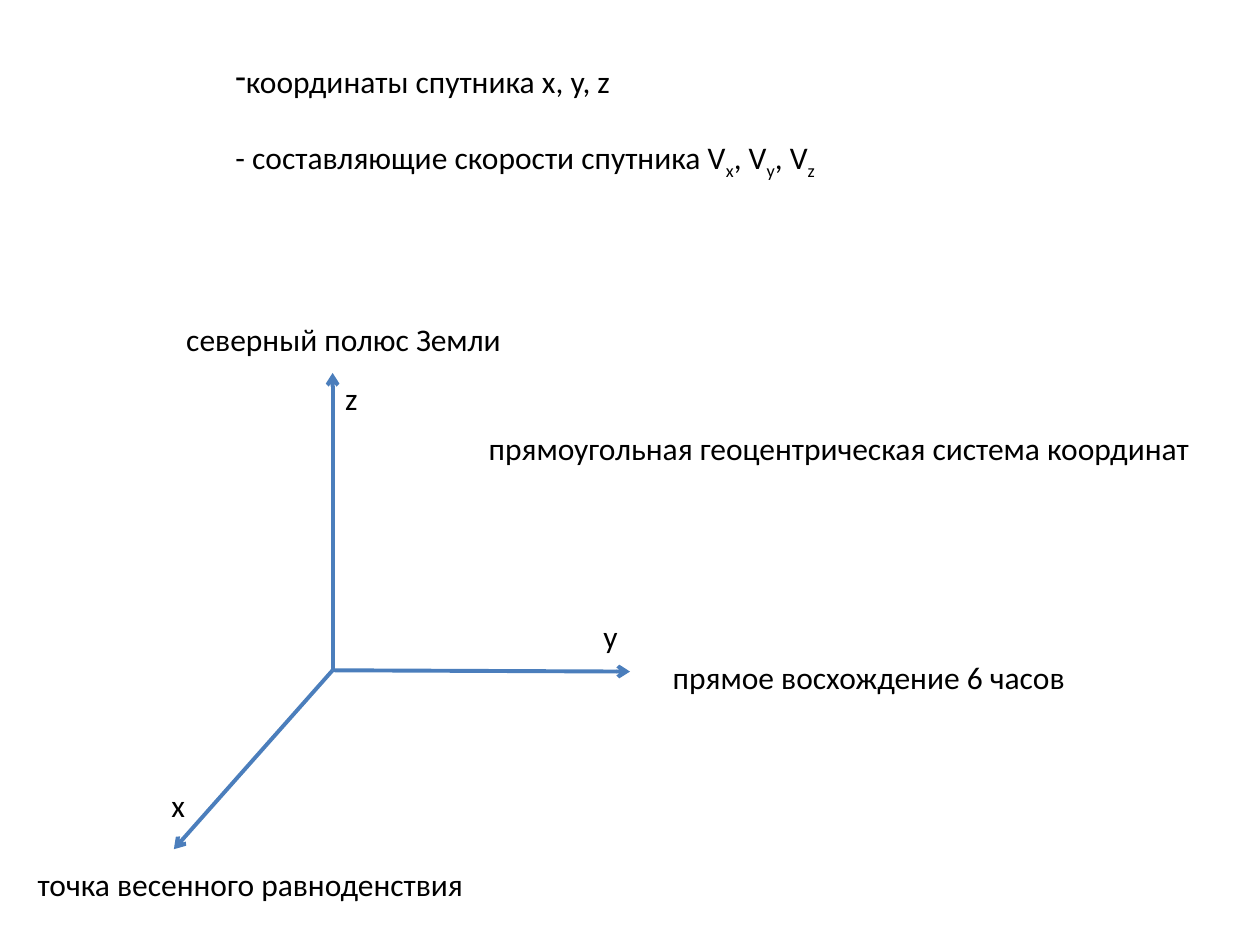
from lxml.etree import SubElement as Sub
from pptx import Presentation
from pptx.dml.color import RGBColor
from pptx.enum.shapes import MSO_CONNECTOR as Link
from pptx.enum.text import MSO_AUTO_SIZE as Fit
from pptx.oxml.ns import qn
from pptx.util import Inches, Pt

BLUE = RGBColor(0x4B, 0x7E, 0xBC)
BLACK = RGBColor(0, 0, 0)
FONT = "Calibri"
LINE = 0.4


def style(run):
    run.font.name = FONT
    run.font.size = Pt(18)
    run.font.color.rgb = BLACK


def add_text(slide, left, top, width, height, text, wrap=True):
    box = slide.shapes.add_textbox(
        Inches(left), Inches(top), Inches(width), Inches(height))
    frame = box.text_frame
    frame.word_wrap = wrap
    frame.auto_size = Fit.SHAPE_TO_FIT_TEXT
    frame.text = text
    for par in frame.paragraphs:
        for run in par.runs:
            style(run)
    return frame


def add_arrow(slide, start, end):
    arrow = slide.shapes.add_connector(
        Link.STRAIGHT, *[Inches(v) for v in (*start, *end)])
    arrow.line.color.rgb = BLUE
    arrow.line.width = Pt(2.25)
    Sub(arrow.line._get_or_add_ln(), qn("a:tailEnd"), type="arrow")
    Sub(arrow._element.spPr, qn("a:effectLst"))


def add_list(slide, left, top, width, height):
    frame = add_text(slide, left, top, width, height,
                     "координаты спутника x, y, z")
    props = frame.paragraphs[0]._p.get_or_add_pPr()
    Sub(props, qn("a:buFontTx"))
    Sub(props, qn("a:buChar"), char="-")
    speed = frame.add_paragraph()
    speed.space_before = Pt(22)
    lead = "- составляющие скорости спутника V"
    for part, axis in ((lead, "x"), (", V", "y"), (", V", "z")):
        for text in (part, axis):
            run = speed.add_run()
            run.text = text
            style(run)
        run._r.get_or_add_rPr().set("baseline", "-25000")


def add_axes(slide, left, top):
    hub = (left + 1.26, top + 2.36)
    for dx, dy in ((2.36, 0.01), (0, -2.36), (-1.26, 1.42)):
        add_arrow(slide, hub, (hub[0] + dx, hub[1] + dy))
    for dx, dy, width, name in (
            (1.26, 0, 0.39, "z"),
            (3.31, 1.89, 0.31, "y"),
            (-0.08, 3.23, 0.16, "x")):
        add_text(slide, left + dx, top + dy, width, LINE, name)
    for dx, dy, width, text in (
            (-1.18, 3.86, 3.62, "точка весенного равноденствия"),
            (0, -0.47, 2.73, "северный полюс Земли"),
            (3.86, 2.21, 3.35, "прямое восхождение 6 часов")):
        add_text(slide, left + dx, top + dy, width, LINE, text, False)


def main():
    deck = Presentation()
    deck.slide_width = Inches(10)
    deck.slide_height = Inches(7.5)
    slide = deck.slides.add_slide(deck.slide_layouts[6])
    add_axes(slide, 1.38, 2.96)
    add_text(slide, 3.78, 3.36, 6.22, LINE,
             "прямоугольная геоцентрическая система координат")
    add_list(slide, 1.77, 0.44, 5, 1.01)
    deck.save("out.pptx")


if __name__ == "__main__":
    main()
